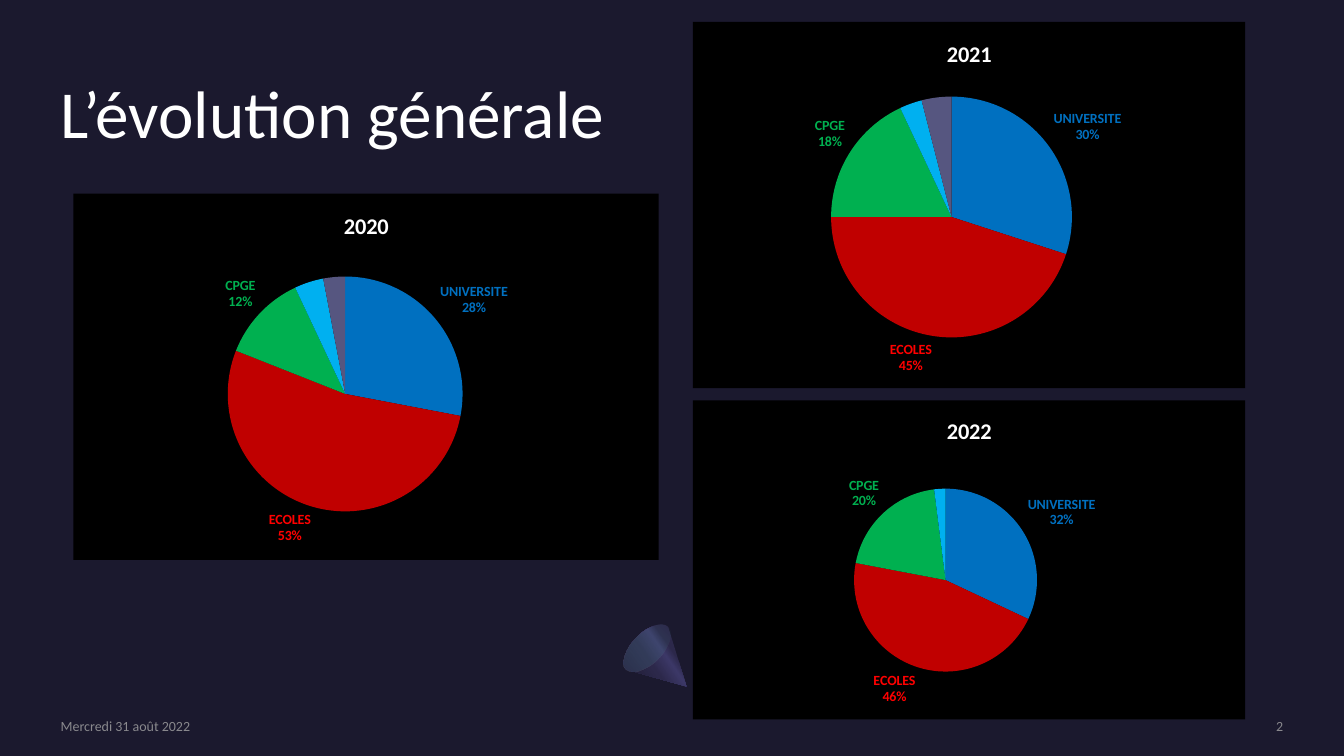
import pptx
import pptx.chart.data
import pptx.dml.color
import pptx.enum.chart
import pptx.enum.shapes
import pptx.enum.text
import pptx.oxml
import pptx.oxml.ns
import pptx.util
from lxml import etree

Cm, Pt = pptx.util.Cm, pptx.util.Pt
qn = pptx.oxml.ns.qn
ALIGN = pptx.enum.text.PP_ALIGN
ANCHOR = pptx.enum.text.MSO_ANCHOR

# Content
HEADING = "L’évolution générale"
HEADING_BOX = (1.52, 1.65, 15.75, 2.21)
FOOTERS = [
    ("Mercredi 31 août 2022", (1.53, 18.08, 7.32, 0.43), ALIGN.LEFT),
    ("2", (27.64, 18.08, 4.7, 0.43), ALIGN.RIGHT),
]
CATEGORIES = ["UNIVERSITE", "ECOLES", "CPGE", "IUT", "STS"]
# year, values, frame in cm, pie centre x, centre y and diameter in cm
YEARS = [
    ("2022", (32, 46, 20, 2, 0), (17.46, 10.09, 13.92, 8.04), (23.83, 14.62, 4.61)),
    ("2020", (28, 53, 12, 4, 3), (1.85, 4.88, 14.75, 9.23), (8.7, 9.93, 5.92)),
    ("2021", (30, 45, 18, 3, 4), (17.46, 0.55, 13.92, 9.23), (23.98, 5.47, 6.07)),
]
CONE_TIP = (17.3, 17.3)
CONE_RIM = [
    ((15.77, 16.87), (15.65, 16.71), (15.75, 16.36), (16.05, 16.05)),
    ((16.05, 16.05), (16.33, 15.77), (16.69, 15.65), (16.84, 15.8)),
]
CONE_BASE = (15.93, 15.57, 0.76, 1.5)

# Formats
COLORS = {
    "background": "1B192E", "panel": "000000", "text": "FFFFFF", "footer": "A6A6A6",
    "UNIVERSITE": "0070C0", "ECOLES": "C00000", "CPGE": "00B050", "IUT": "00B0F0", "STS": "565680",
}
LABEL_COLORS = {"UNIVERSITE": "0070C0", "ECOLES": "FF0000", "CPGE": "00B050"}
# position %, colour, opacity %
CONE_STOPS = [(30, "2C284A", 100), (40, "3C3867", 100), (60, "2C284A", 100), (100, "1B192E", 100)]
BASE_STOPS = [(0, "454075", 33), (100, "5BEFC1", 0)]
FRAME = {"margin_left": 0, "margin_top": 0, "margin_right": 0, "margin_bottom": 0,
         "word_wrap": True, "auto_size": pptx.enum.text.MSO_AUTO_SIZE.NONE}
FONTS = {
    "heading": {"name": "Calibri", "size": Pt(48), "bold": False},
    "footer": {"name": "Calibri", "size": Pt(10)},
    "chart": {"name": "Calibri", "size": Pt(10)},
    "year": {"name": "Calibri", "size": Pt(16), "bold": True},
    "label": {"name": "Calibri", "size": Pt(10), "bold": True},
}


def rgb(color):
    return pptx.dml.color.RGBColor.from_string(color)


def apply(target, values):
    for attribute, value in values.items():
        setattr(target, attribute, value)


def style_font(font, style, color):
    apply(font, FONTS[style])
    font.color.rgb = rgb(color)


def write(shape, text, style, color, align, anchor):
    frame = shape.text_frame
    apply(frame, {**FRAME, "vertical_anchor": anchor})
    paragraph = frame.paragraphs[0]
    paragraph.alignment = align
    run = paragraph.add_run()
    run.text = text
    style_font(run.font, style, color)
    return paragraph


def gradient(shape, stops, angle):
    shape.shadow.inherit = False
    shape.line.fill.background()
    shape.fill.gradient()
    shape.fill.gradient_angle = 0
    fill = shape.element.spPr.find(qn("a:gradFill"))
    stop_list = fill.find(qn("a:gsLst"))
    for stop in list(stop_list):
        stop_list.remove(stop)
    for position, color, opacity in stops:
        stop = etree.SubElement(stop_list, qn("a:gs"), pos=str(position * 1000))
        tint = etree.SubElement(stop, qn("a:srgbClr"), val=color)
        etree.SubElement(tint, qn("a:alpha"), val=str(opacity * 1000))
    fill.find(qn("a:lin")).set("ang", str(angle * 60000))


def place(parent, index, **fractions):
    """Give a chart title or plot area a manual layout."""
    for old in parent.findall(qn("c:layout")):
        parent.remove(old)
    layout = etree.Element(qn("c:layout"))
    manual = etree.SubElement(layout, qn("c:manualLayout"))
    if "w" in fractions:
        etree.SubElement(manual, qn("c:layoutTarget"), val="inner")
    for mode in ("xMode", "yMode"):
        etree.SubElement(manual, qn("c:" + mode), val="edge")
    for key, value in fractions.items():
        etree.SubElement(manual, qn("c:" + key), val=f"{value:.4f}")
    parent.insert(index, layout)


def add_pie(slide, year, values, box, pie):
    data = pptx.chart.data.CategoryChartData()
    data.categories = CATEGORIES
    data.add_series("Series 1", values)
    chart = slide.shapes.add_chart(
        pptx.enum.chart.XL_CHART_TYPE.PIE, *map(Cm, box), data).chart
    chart.has_legend = False
    style_font(chart.font, "chart", COLORS["text"])
    space = chart.element
    panel = pptx.oxml.parse_xml(
        f'<c:spPr {pptx.oxml.ns.nsdecls("c", "a")}><a:solidFill><a:srgbClr val="{COLORS["panel"]}"/>'
        '</a:solidFill><a:ln><a:noFill/></a:ln></c:spPr>')
    space.find(qn("c:txPr")).addprevious(panel)

    # Year and pie positions
    left, top, width, height = box
    center_x, center_y, diameter = pie
    chart.has_title = True
    chart.chart_title.include_in_layout = False
    run = chart.chart_title.text_frame.paragraphs[0].add_run()
    run.text = year
    style_font(run.font, "year", COLORS["text"])
    place(space.find(".//" + qn("c:title")), 1, x=0.5 - 0.66 / width, y=0.035)
    place(space.find(".//" + qn("c:plotArea")), 0,
          x=(center_x - diameter / 2 - left) / width, y=(center_y - diameter / 2 - top) / height,
          w=diameter / width, h=diameter / height)

    # Slices and labels
    plot = chart.plots[0]
    plot.vary_by_categories = True
    series = plot.series[0]
    series.data_labels.show_value = False
    for index, category in enumerate(CATEGORIES):
        point = series.points[index]
        point.format.fill.solid()
        point.format.fill.fore_color.rgb = rgb(COLORS[category])
        point.format.line.fill.background()
        if category in LABEL_COLORS:
            label = point.data_label
            style_font(label.font, "label", LABEL_COLORS[category])
            label.position = pptx.enum.chart.XL_LABEL_POSITION.OUTSIDE_END
    for label in space.iter(qn("c:dLbl")):
        for flag, shown in (("showVal", "0"), ("showCatName", "1"), ("showPercent", "1")):
            label.find(qn("c:" + flag)).set("val", shown)
        etree.SubElement(label, qn("c:separator")).text = "\n"


def add_cone(slide):
    rim = []
    for a, b, c, d in CONE_RIM:
        for t in (step / 8 for step in range(9)):
            weights = ((1 - t) ** 3, 3 * t * (1 - t) ** 2, 3 * t * t * (1 - t), t ** 3)
            rim.append(tuple(sum(w * p[axis] for w, p in zip(weights, (a, b, c, d)))
                             for axis in (0, 1)))
    builder = slide.shapes.build_freeform(*map(Cm, CONE_TIP))
    builder.add_line_segments([tuple(map(Cm, point)) for point in rim], close=True)
    gradient(builder.convert_to_shape(), CONE_STOPS, 145)
    base = slide.shapes.add_shape(pptx.enum.shapes.MSO_SHAPE.OVAL, *map(Cm, CONE_BASE))
    base.rotation = 225
    gradient(base, BASE_STOPS, 90)


def main():
    deck = pptx.Presentation()
    deck.slide_width, deck.slide_height = Cm(33.87), Cm(19.05)
    slide = deck.slides.add_slide(deck.slide_layouts[5])
    slide.background.fill.solid()
    slide.background.fill.fore_color.rgb = rgb(COLORS["background"])
    add_cone(slide)

    # Heading
    heading = slide.shapes.title
    apply(heading, dict(zip(("left", "top", "width", "height"), map(Cm, HEADING_BOX))))
    write(heading, HEADING, "heading", COLORS["text"], ALIGN.LEFT, ANCHOR.BOTTOM).line_spacing = 0.9

    # Date and page number
    for text, box, align in FOOTERS:
        footer = slide.shapes.add_textbox(*map(Cm, box))
        write(footer, text, "footer", COLORS["footer"], align, ANCHOR.MIDDLE)
        tint = footer.element.find(".//" + qn("a:srgbClr"))
        etree.SubElement(tint, qn("a:alpha"), val="80000")

    # Pie charts
    for year in YEARS:
        add_pie(slide, *year)
    deck.save("out.pptx")


if __name__ == "__main__":
    main()
